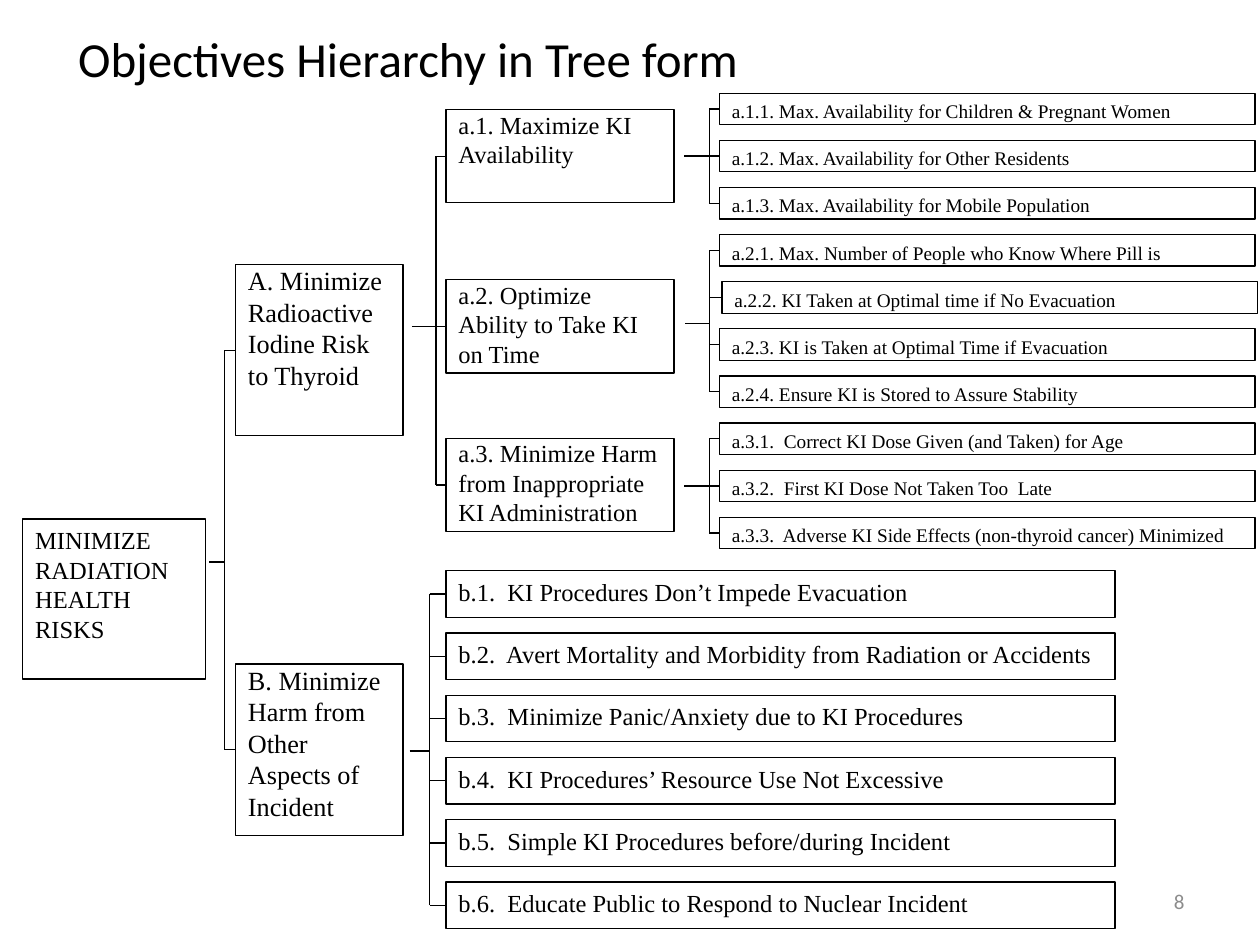
from pptx import Presentation
from pptx.dml.color import RGBColor
from pptx.enum.shapes import MSO_CONNECTOR, MSO_SHAPE
from pptx.enum.text import MSO_ANCHOR, PP_ALIGN
from pptx.oxml import parse_xml
from pptx.oxml.ns import nsdecls
from pptx.util import Inches, Pt

RECT = MSO_SHAPE.RECTANGLE
LINE = MSO_CONNECTOR.STRAIGHT
TOP, MID = MSO_ANCHOR.TOP, MSO_ANCHOR.MIDDLE
LEFT, RIGHT = PP_ALIGN.LEFT, PP_ALIGN.RIGHT
WIDE, HIGH = 10, 7.5
COLS, ROWS = 100, 75
HUE = {"ink": "000000", "page": "FFFFFF", "dim": "8C8C8C"}
SERIF, SANS = "Times New Roman", "Calibri"


class Deck:
    def __init__(self):
        self.prs = Presentation()
        self.prs.slide_width, self.prs.slide_height = Inches(WIDE), Inches(HIGH)
        self.slide = self.prs.slides.add_slide(self.prs.slide_layouts[5])

    def x(self, col):
        return round(self.prs.slide_width * col / COLS)

    def y(self, row):
        return round(self.prs.slide_height * row / ROWS)

    def area(self, col, row, wide, high):
        return self.x(col), self.y(row), self.x(wide), self.y(high)

    def hue(self, name):
        return RGBColor.from_string(HUE[name])

    def words(self, shape, text, size, face, hue="ink", align=LEFT, anchor=TOP, wrap=True):
        frame = shape.text_frame
        frame.word_wrap = wrap
        frame.vertical_anchor = anchor
        para = frame.paragraphs[0]
        para.alignment = align
        run = para.add_run()
        run.text = text
        run.font.size, run.font.name = Pt(size), face
        run.font.color.rgb = self.hue(hue)

    def title(self, text, *area):
        shape = self.slide.shapes.title
        shape.left, shape.top, shape.width, shape.height = self.area(*area)
        self.words(shape, text, 28, SANS, wrap=False)

    def label(self, text, *area):
        shape = self.slide.shapes.add_textbox(*self.area(*area))
        self.words(shape, text, 12, SANS, "dim", RIGHT, MID)

    def box(self, text, size, *area, flush=False):
        shape = self.slide.shapes.add_shape(RECT, *self.area(*area))
        shape.shadow.inherit = False
        shape.fill.solid()
        shape.fill.fore_color.rgb = self.hue("page")
        shape.line.color.rgb = self.hue("ink")
        shape.line.width = Pt(0.75)
        if flush:
            shape.text_frame.margin_top = shape.text_frame.margin_bottom = 0
        self.words(shape, text, size, SERIF)
        return shape

    def stack(self, texts, size, col, row, wide, high, step):
        return [self.box(text, size, col, row + i * step, wide, high)
                for i, text in enumerate(texts)]

    def line(self, start, end, child=None):
        link = self.slide.shapes.add_connector(LINE, *start, *end)
        link.line.color.rgb = self.hue("ink")
        link.line.width = Pt(0.75)
        link._element.spPr.append(parse_xml(f"<a:effectLst {nsdecls('a')}/>"))
        if child is not None:
            link.end_connect(child, 1)

    def tree(self, stem, row, trunk, kids):
        mids = [kid.top + kid.height // 2 for kid in kids]
        spine = self.x(trunk)
        self.line((spine, mids[0]), (spine, mids[-1]))
        core = len(kids) // 2 if len(kids) % 2 else None
        for i, (kid, mid) in enumerate(zip(kids, mids)):
            begin = self.x(stem) if i == core else spine
            self.line((begin, mid), (kid.left, mid), kid)
        if core is None:
            self.line((self.x(stem), self.y(row)), (spine, self.y(row)))


def main():
    deck = Deck()
    deck.title("Objectives Hierarchy in Tree form", 5.2, 1.8, 55, 5.7)
    deck.label("8", 71.7, 69.5, 23.3, 4)

    deck.box("MINIMIZE RADIATION HEALTH RISKS", 14, 1.8, 41.2, 14.5, 12.7)
    goals = [deck.box(text, 15, 18.7, row, 13.3, 13.6, flush=True) for text, row in (
        ("A. Minimize Radioactive Iodine Risk to Thyroid", 21),
        ("B. Minimize Harm from Other Aspects of Incident", 52.7))]
    aims = [deck.box(text, 14, 35.4, row, 18.1, 7.4, flush=True) for text, row in (
        ("a.1. Maximize KI Availability", 8.7),
        ("a.2. Optimize Ability to Take KI on Time", 22.2),
        ("a.3. Minimize Harm from Inappropriate KI Administration", 34.8))]
    means = deck.stack((
        "a.1.1. Max. Availability for Children & Pregnant Women",
        "a.1.2. Max. Availability for Other Residents",
        "a.1.3. Max. Availability for Mobile Population",
        "a.2.1. Max. Number of People who Know Where Pill is",
        "a.2.2. KI Taken at Optimal time if No Evacuation",
        "a.2.3. KI is Taken at Optimal Time if Evacuation",
        "a.2.4. Ensure KI is Stored to Assure Stability",
        "a.3.1.  Correct KI Dose Given (and Taken) for Age",
        "a.3.2.  First KI Dose Not Taken Too  Late",
        "a.3.3.  Adverse KI Side Effects (non-thyroid cancer) Minimized",
    ), 11, 57.1, 7.4, 42.5, 2.5, 3.74)
    means[4].left = deck.x(57.3)
    others = deck.stack((
        "b.1.  KI Procedures Don’t Impede Evacuation",
        "b.2.  Avert Mortality and Morbidity from Radiation or Accidents",
        "b.3.  Minimize Panic/Anxiety due to KI Procedures",
        "b.4.  KI Procedures’ Resource Use Not Excessive",
        "b.5.  Simple KI Procedures before/during Incident",
        "b.6.  Educate Public to Respond to Nuclear Incident",
    ), 14, 35.4, 45.3, 53.1, 3.7, 4.94)

    for stem, row, trunk, kids in (
            (16.6, 44.6, 17.8, goals),
            (32.7, 25.6, 34.6, aims),
            (54.3, 12.4, 56.3, means[:3]),
            (54.4, 25.7, 56.3, means[3:7]),
            (54.3, 38.5, 56.3, means[7:]),
            (32.5, 59.6, 34.1, others)):
        deck.tree(stem, row, trunk, kids)

    deck.prs.save("out.pptx")


if __name__ == "__main__":
    main()
